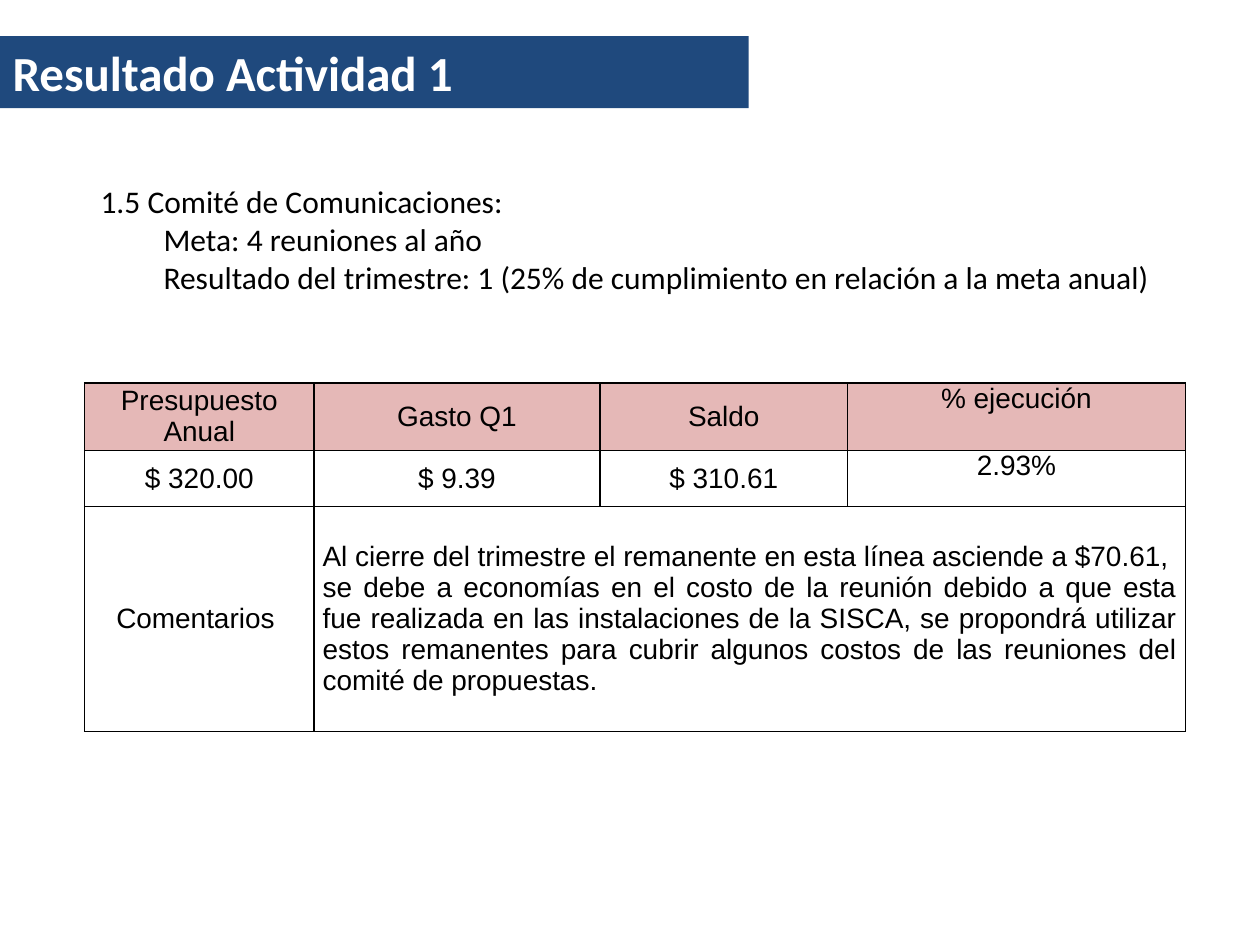
from lxml.etree import SubElement
from pptx import Presentation
from pptx.dml.color import RGBColor
from pptx.enum.text import MSO_ANCHOR, MSO_AUTO_SIZE, PP_ALIGN
from pptx.oxml.ns import qn
from pptx.util import Pt

BLACK, WHITE, NAVY, PINK = "000000", "FFFFFF", "1F497D", "E5B8B7"


def color(value):
    return RGBColor.from_string(value)


def set_font(paragraph, name, size, hex_color, bold=False):
    font = paragraph.font
    font.name, font.size, font.bold = name, Pt(size), bold
    font.color.rgb = color(hex_color)


def add_title(slide, box, text):
    title = slide.shapes.title
    title.left, title.top, title.width, title.height = map(Pt, box)
    title.fill.solid()
    title.fill.fore_color.rgb = color(NAVY)
    frame = title.text_frame
    frame.text = text
    frame.auto_size = MSO_AUTO_SIZE.NONE
    frame.vertical_anchor = MSO_ANCHOR.MIDDLE
    paragraph = frame.paragraphs[0]
    paragraph.alignment = PP_ALIGN.LEFT
    set_font(paragraph, "Calibri", 28, WHITE, bold=True)


def add_summary(slide, box, heading, details):
    frame = slide.shapes.add_textbox(*map(Pt, box)).text_frame
    frame.word_wrap = True
    frame.vertical_anchor = MSO_ANCHOR.MIDDLE
    frame.text = "\n".join([heading, *details])
    for index, paragraph in enumerate(frame.paragraphs):
        # Details sit one half inch deeper than the heading
        properties = paragraph._p.get_or_add_pPr()
        properties.set("marL", str(Pt(72 if index else 36)))
        properties.set("indent", "0")
        set_font(paragraph, "Calibri", 18, BLACK)


def add_borders(cell):
    properties = cell._tc.get_or_add_tcPr()
    for side in ("lnL", "lnR", "lnT", "lnB"):
        line = SubElement(properties, qn(f"a:{side}"), w=str(Pt(1)))
        fill = SubElement(line, qn("a:solidFill"))
        SubElement(fill, qn("a:srgbClr"), val=BLACK)


def format_cell(cell, fill, anchor, alignment):
    add_borders(cell)
    if fill:
        cell.fill.solid()
        cell.fill.fore_color.rgb = color(fill)
    else:
        cell.fill.background()
    cell.margin_left = cell.margin_right = Pt(5)
    cell.margin_top = cell.margin_bottom = 0
    cell.vertical_anchor = anchor
    for paragraph in cell.text_frame.paragraphs:
        paragraph.alignment = alignment
        set_font(paragraph, "Arial", 16, BLACK)


def add_budget_table(slide, box, widths, heights, rows):
    table = slide.shapes.add_table(len(rows), len(widths), *map(Pt, box)).table
    table.first_row = table.horz_banding = False
    for column, width in zip(table.columns, widths):
        column.width = Pt(width)
    for row, height in zip(table.rows, heights):
        row.height = Pt(height)
    last_row, last_column = len(rows) - 1, len(widths) - 1
    # The comment spans all columns after its label
    table.cell(last_row, 1).merge(table.cell(last_row, last_column))
    for r, texts in enumerate(rows):
        for c in range(len(widths)):
            cell = table.cell(r, c)
            if c < len(texts):
                cell.text = texts[c]
            is_comment = r == last_row and c > 0
            at_top = c == last_column and r < last_row
            format_cell(
                cell,
                PINK if r == 0 else None,
                MSO_ANCHOR.TOP if at_top else MSO_ANCHOR.MIDDLE,
                PP_ALIGN.JUSTIFY if is_comment else PP_ALIGN.CENTER,
            )


def main():
    presentation = Presentation()
    presentation.slide_width, presentation.slide_height = Pt(720), Pt(540)
    slide = presentation.slides.add_slide(presentation.slide_layouts[5])

    # Title bar
    add_title(slide, (0, 20.6, 427.8, 41.2), "Resultado Actividad 1")

    # Goal and result
    add_summary(
        slide, (14.4, 100.2, 674.6, 72.7),
        "1.5 Comité de Comunicaciones:",
        ["Meta: 4 reuniones al año",
         "Resultado del trimestre: 1 (25% de cumplimiento en relación a la meta anual)"],
    )

    # Budget table
    comment = (
        "Al cierre del trimestre el remanente en esta línea asciende a $70.61,  "
        "se debe a economías en el costo de la reunión debido a que esta fue "
        "realizada en las instalaciones de la SISCA, se propondrá utilizar estos "
        "remanentes para cubrir algunos costos de las reuniones del comité de "
        "propuestas. "
    )
    add_budget_table(
        slide, (48.4, 218.9, 629, 199),
        widths=(131, 163.5, 141.5, 193), heights=(38.5, 32, 128.5),
        rows=[
            ("Presupuesto Anual", "Gasto Q1", "Saldo", "% ejecución"),
            ("$ 320.00", "$ 9.39", "$ 310.61", "2.93%"),
            ("Comentarios ", comment),
        ],
    )
    presentation.save("out.pptx")


if __name__ == "__main__":
    main()
